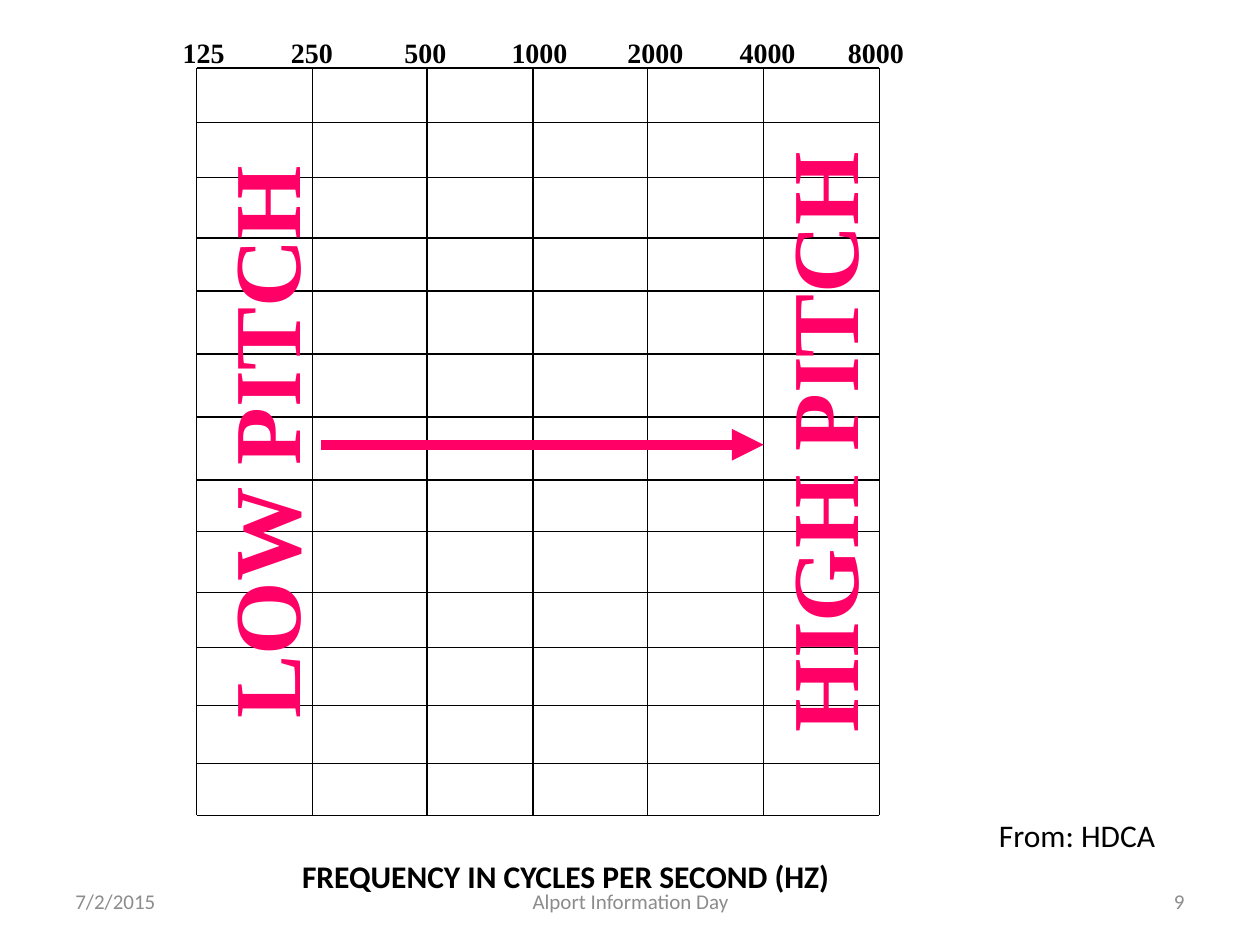
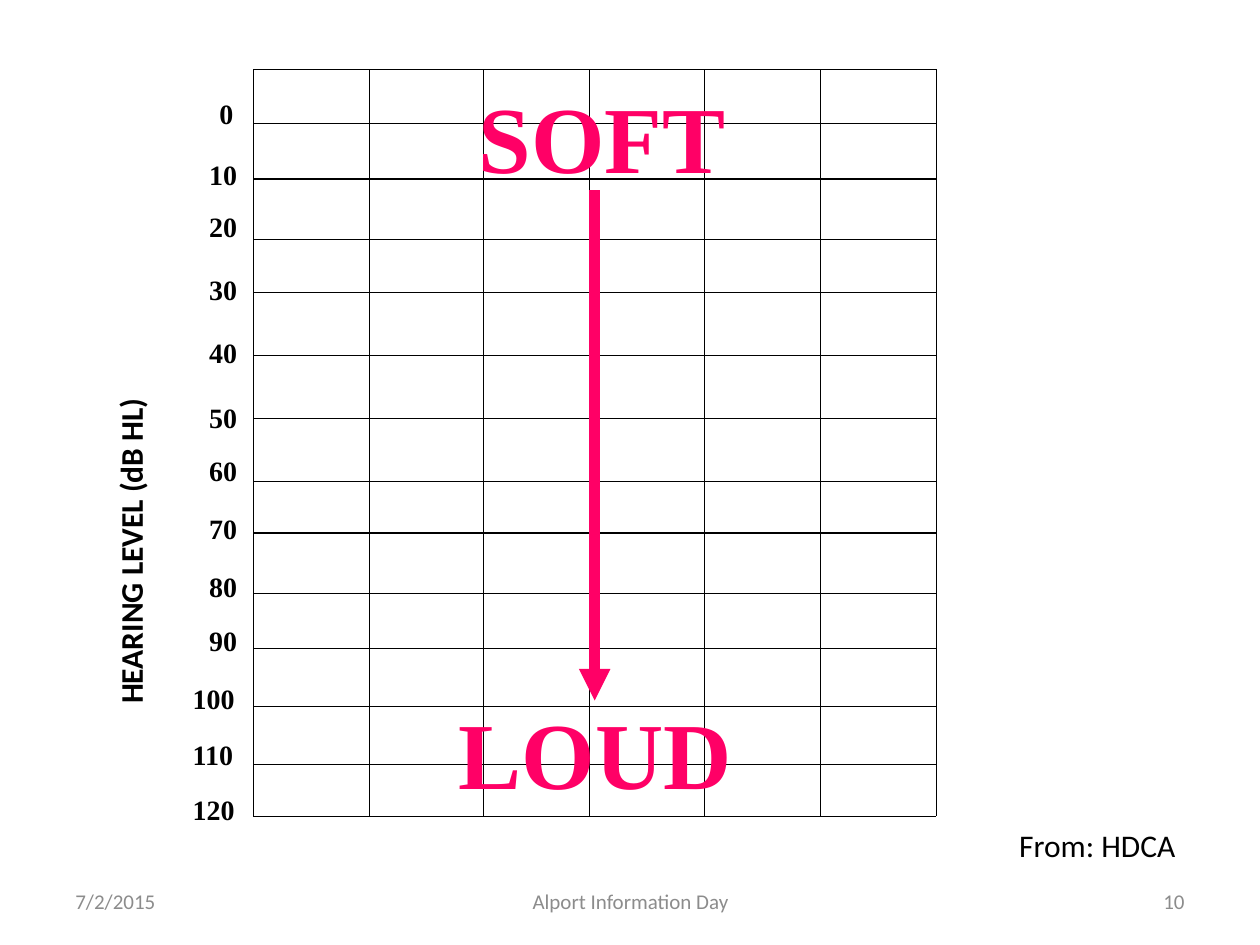
from pptx import Presentation
from pptx.dml.color import RGBColor
from pptx.enum.shapes import MSO_CONNECTOR as Connector
from pptx.enum.text import MSO_ANCHOR as Anchor, PP_ALIGN as Align
from pptx.oxml.ns import qn
from pptx.util import Inches, Pt
from lxml import etree

BLACK = RGBColor(0x00, 0x00, 0x00)
PINK = RGBColor(0xFF, 0x00, 0x66)
GREY = RGBColor(0x8C, 0x8C, 0x8C)
SANS, SERIF = "Calibri", "Times New Roman"

# Text styles: font, size, bold, colour
TICK = (SERIF, 16, True, BLACK)
AXIS = (SANS, 18, True, BLACK)
SOURCE = (SANS, 18, False, BLACK)
WORD = (SERIF, 54, True, PINK)
FOOTER = (SANS, 12, False, GREY)

# Audiogram grid lines, measured from the grid's top left corner
COLUMNS = [0, 0.92, 1.83, 2.67, 3.58, 4.5, 5.42]
ROWS = [0, 0.43, 0.87, 1.35, 1.77, 2.27, 2.77,
        3.27, 3.68, 4.16, 4.6, 5.06, 5.52, 5.93]


def add_text(page, text, place, style, align=Align.LEFT, turn=0,
             inset=True, anchor=Anchor.TOP):
    box = page.shapes.add_textbox(*map(Inches, place))
    box.rotation = turn
    frame = box.text_frame
    frame.word_wrap = True
    frame.vertical_anchor = anchor
    if not inset:
        frame.margin_left = frame.margin_right = 0
        frame.margin_top = frame.margin_bottom = 0
    para = frame.paragraphs[0]
    para.text = text
    para.alignment = align
    font = para.font
    font.name, size, font.bold, font.color.rgb = style
    font.size = Pt(size)


def add_line(page, start, end, color=BLACK, width=0.75, arrow=False):
    line = page.shapes.add_connector(Connector.STRAIGHT, *map(Inches, start + end))
    line.line.color.rgb = color
    line.line.width = Pt(width)
    properties = line._element.spPr
    if arrow:
        etree.SubElement(properties.find(qn("a:ln")), qn("a:tailEnd"), type="triangle")
    etree.SubElement(properties, qn("a:effectLst"))


deck = Presentation()
deck.slide_width, deck.slide_height = Inches(10), Inches(7.5)
blank = deck.slide_layouts[6]
pitch_page, loudness_page = (deck.slides.add_slide(blank) for _ in range(2))

# Shared parts: grid and footers
for page, number, left, top in [(pitch_page, "9", 1.56, 0.54),
                                (loudness_page, "10", 2.01, 0.55)]:
    right, bottom = left + COLUMNS[-1], top + ROWS[-1]
    for row in ROWS:
        add_line(page, (left, top + row), (right, top + row))
    for column in COLUMNS:
        add_line(page, (left + column, top), (left + column, bottom))

    for text, x, width, align in [("7/2/2015", 0.5, 2.33, Align.LEFT),
                                  ("Alport Information Day", 3.42, 3.17, Align.CENTER),
                                  (number, 7.17, 2.33, Align.RIGHT)]:
        add_text(page, text, (x, 6.95, width, 0.4), FOOTER, align, anchor=Anchor.MIDDLE)

# Pitch slide: frequency scale
for index, x in enumerate([1.45, 2.31, 3.21, 4.06, 4.98, 5.87, 6.73]):
    frequency = str(125 * 2 ** index)
    add_text(pitch_page, frequency, (x, 0.28, 0.12 * len(frequency), 0.27), TICK,
             inset=False)
add_text(pitch_page, "FREQUENCY IN CYCLES PER SECOND (HZ)", (0.98, 6.8, 7.02, 0.4),
         AXIS, Align.CENTER, inset=False)

# Pitch slide: from low to high
for text, x in [("LOW PITCH", -0.85), ("HIGH PITCH", 3.58)]:
    add_text(pitch_page, text, (x, 3.01, 5.87, 1), WORD, Align.CENTER, turn=270)
add_line(pitch_page, (2.55, 3.53), (6.06, 3.53), PINK, 6, arrow=True)
add_text(pitch_page, "From: HDCA", (7.83, 6.43, 1.65, 0.4), SOURCE)

# Loudness slide: hearing level scale, placed by number of digits
TICK_LEFTS = {1: 1.74, 2: 1.66, 3: 1.53}
TICK_TOPS = [0.77, 1.25, 1.66, 2.16, 2.66, 3.18, 3.6,
             4.06, 4.52, 4.95, 5.41, 5.85, 6.29]
for index, y in enumerate(TICK_TOPS):
    level = str(10 * index)
    digits = len(level)
    add_text(loudness_page, level, (TICK_LEFTS[digits], y, 0.12 * digits, 0.27), TICK,
             inset=False)
add_text(loudness_page, "HEARING LEVEL (dB HL)", (-1.22, 3.13, 4.61, 0.5), AXIS, turn=270)

# Loudness slide: from soft to loud
for text, x, y, width in [("SOFT", 1.92, 0.58, 5.72), ("LOUD", 1.79, 5.47, 5.87)]:
    add_text(loudness_page, text, (x, y, width, 1), WORD, Align.CENTER)
add_line(loudness_page, (4.72, 1.51), (4.72, 5.56), PINK, 6, arrow=True)
add_text(loudness_page, "From: HDCA", (7.99, 6.51, 1.65, 0.4), SOURCE)

deck.save("out.pptx")
